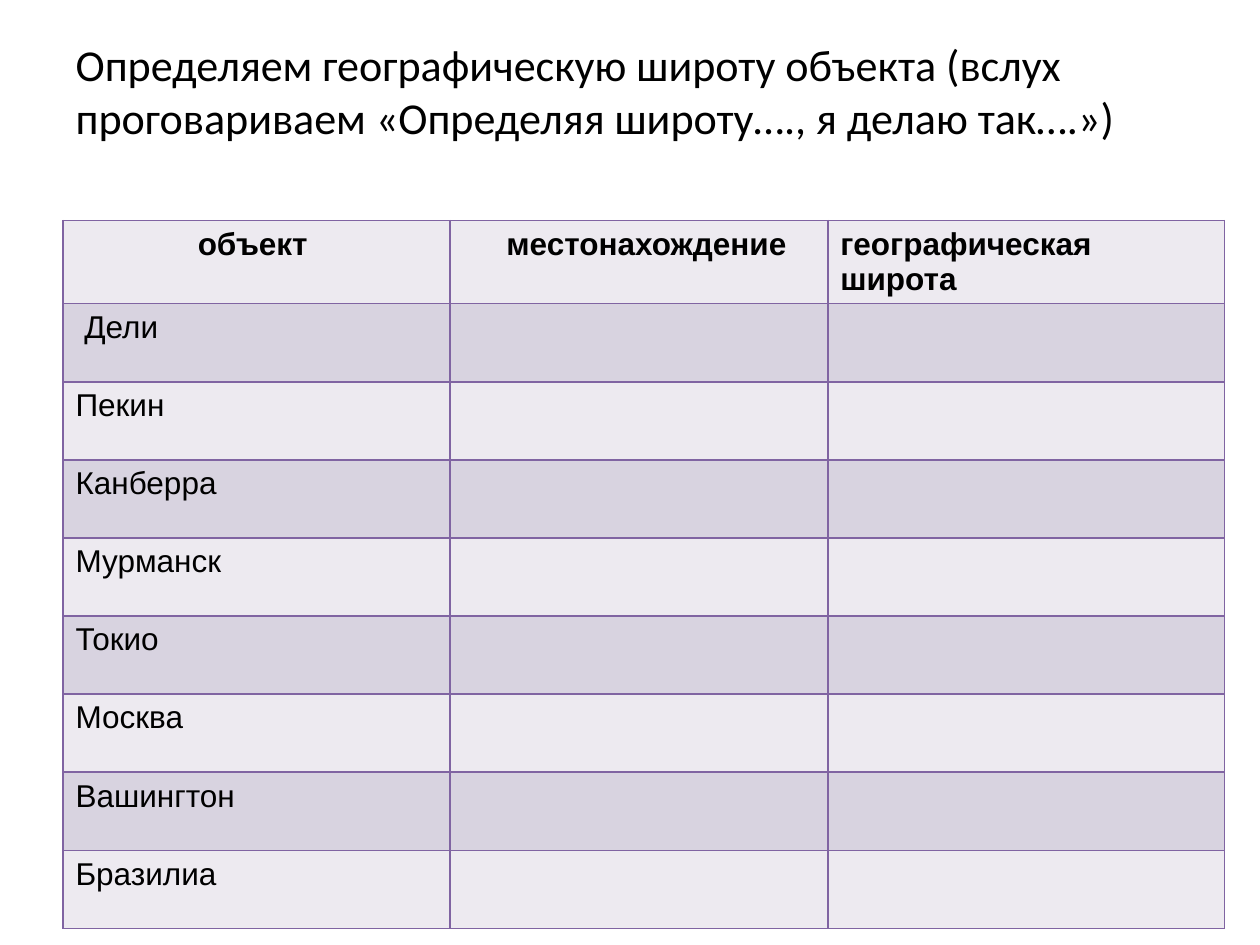
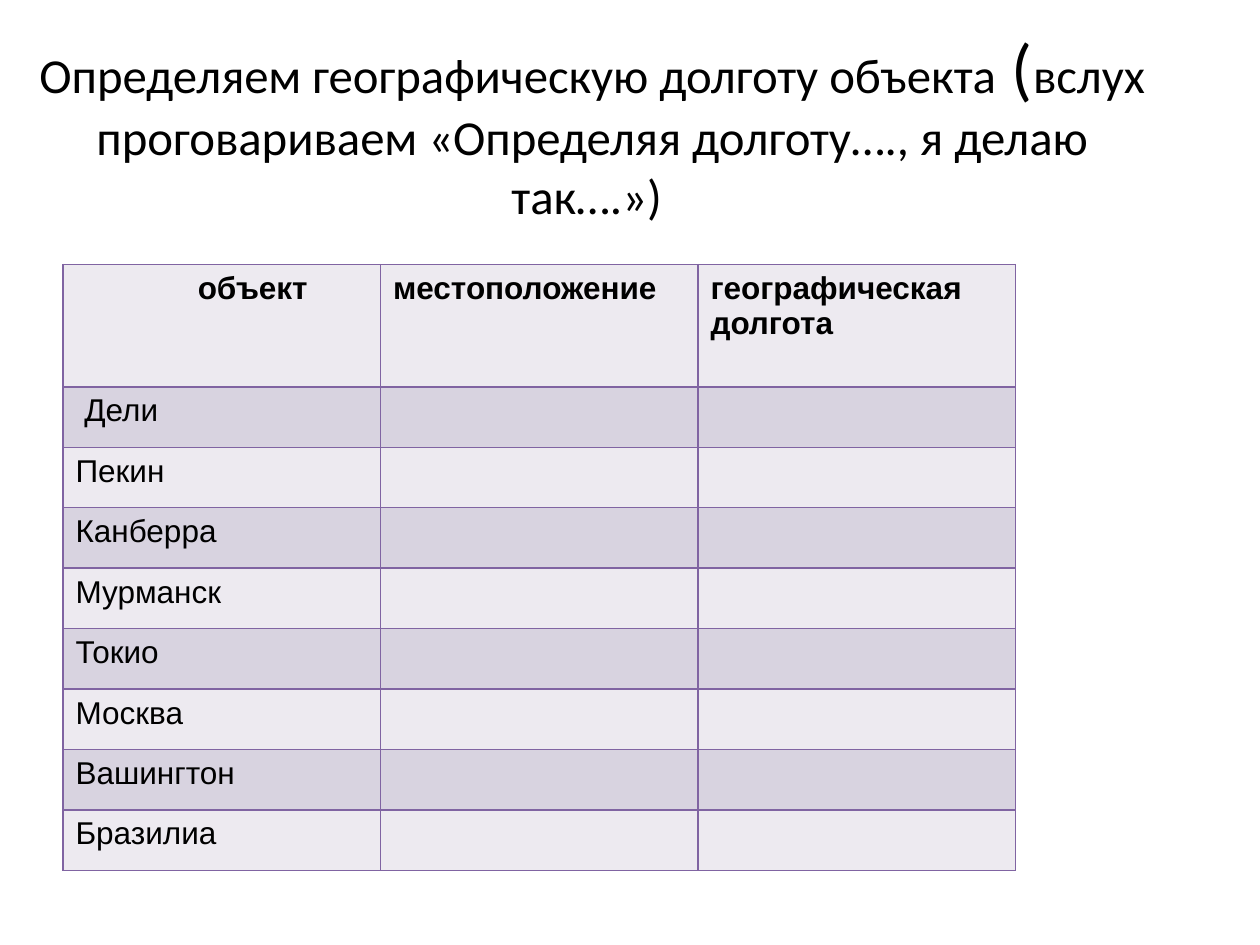
from lxml import etree
from pptx import Presentation
from pptx import util as u
from pptx.dml.color import RGBColor
from pptx.enum import text
from pptx.oxml.ns import qn

BLACK = RGBColor(0x00, 0x00, 0x00)
BORDER = RGBColor(0x80, 0x64, 0xA2)
LIGHT = RGBColor(0xED, 0xEA, 0xF0)
DARK = RGBColor(0xD8, 0xD3, 0xE0)

CITIES = ["Дели", "Пекин", "Канберра", "Мурманск",
          "Токио", "Москва", "Вашингтон", "Бразилиа"]
CELL_MARGIN = 0.1
OBJECT_INDENT = 0.97
PLACE_INDENT = 0.35
FIRST_CITY_INDENT = 0.07


def set_attrs(target, values):
    for name, value in values.items():
        setattr(target, name, value)


class Deck:
    title_font = {"name": "Calibri", "bold": False}
    cell_font = {"name": "Arial", "size": u.Pt(18)}

    def __init__(self):
        self.prs = Presentation()
        self.prs.slide_width = u.Inches(10)
        self.prs.slide_height = u.Inches(7.5)
        self.s = None

    def slide(self):
        self.s = self.prs.slides.add_slide(self.prs.slide_layouts[5])

    def title(self, left, top, runs, align, frame):
        sp = self.s.shapes.title
        set_attrs(sp, {"left": u.Inches(left), "top": u.Inches(top),
                       "width": u.Inches(9), "height": u.Inches(1.25)})
        tf = sp.text_frame
        set_attrs(tf, {"word_wrap": True,
                       "auto_size": text.MSO_AUTO_SIZE.NONE, **frame})
        p = tf.paragraphs[0]
        p.alignment = align
        for words, size in runs:
            r = p.add_run()
            r.text = words
            set_attrs(r.font, {**self.title_font, "size": u.Pt(size)})
            r.font.color.rgb = BLACK

    def borders(self, cell):
        tc_pr = cell._tc.get_or_add_tcPr()
        for i, side in enumerate(("lnL", "lnR", "lnT", "lnB")):
            ln = etree.Element(qn(f"a:{side}"), w=str(u.Pt(1)))
            fill = etree.SubElement(ln, qn("a:solidFill"))
            etree.SubElement(fill, qn("a:srgbClr"), val=str(BORDER))
            tc_pr.insert(i, ln)

    def cell(self, cell, words, indent, fill, bold):
        cell.fill.solid()
        cell.fill.fore_color.rgb = fill
        cell.margin_left = u.Inches(CELL_MARGIN + indent)
        self.borders(cell)
        p = cell.text_frame.paragraphs[0]
        set_attrs(p.font, self.cell_font)
        if words:
            r = p.add_run()
            r.text = words
            set_attrs(r.font, {**self.cell_font, "bold": bold})
            r.font.color.rgb = BLACK

    def city_table(self, top, widths, header_height, row_height, headers):
        heights = [header_height] + [row_height] * len(CITIES)
        table = self.s.shapes.add_table(
            len(heights), len(widths), u.Inches(0.5), u.Inches(top),
            u.Inches(sum(widths)), u.Inches(sum(heights))).table
        for column, width in zip(table.columns, widths):
            column.width = u.Inches(width)
        for row, height in zip(table.rows, heights):
            row.height = u.Inches(height)
        rows = [headers] + [[(city, 0), ("", 0), ("", 0)] for city in CITIES]
        rows[1][0] = (CITIES[0], FIRST_CITY_INDENT)
        for i, row in enumerate(rows):
            for j, (words, indent) in enumerate(row):
                self.cell(table.cell(i, j), words, indent,
                          DARK if i % 2 else LIGHT, i == 0)


def main():
    deck = Deck()

    deck.slide()
    deck.title(0.5, 0.3, [
        ("Определяем географическую широту объекта (вслух "
         "проговариваем «Определяя широту…., я делаю так….»)", 25.2),
    ], text.PP_ALIGN.LEFT,
        {"vertical_anchor": text.MSO_ANCHOR.TOP, "margin_top": 0})
    deck.city_table(1.75, [3.07, 3, 3.15], 0.62, 0.62, [
        ("объект", OBJECT_INDENT), ("местонахождение", PLACE_INDENT),
        ("географическая широта", 0)])

    deck.slide()
    deck.title(0.2, 0.36, [
        ("Определяем географическую долготу объекта", 27.9),
        (" (", 39.6),
        ("вслух проговариваем «Определяя долготу…., я делаю так….») ", 27.9),
    ], text.PP_ALIGN.CENTER, {"vertical_anchor": text.MSO_ANCHOR.MIDDLE})
    deck.city_table(2.1, [2.52] * 3, 0.97, 0.48, [
        ("объект", OBJECT_INDENT), ("местоположение", 0),
        ("географическая долгота", 0)])

    deck.prs.save("out.pptx")


if __name__ == "__main__":
    main()
